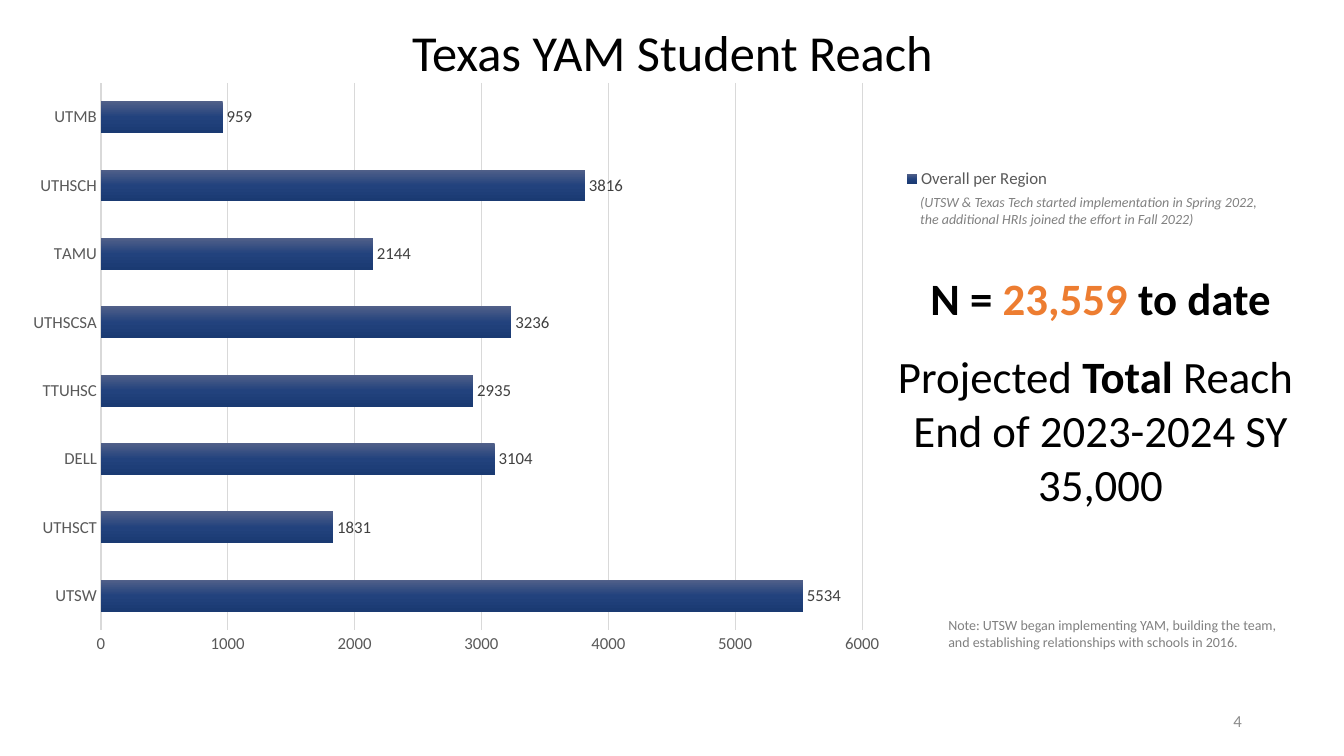
"""Build the Texas YAM student reach slide."""
import pptx
import pptx.chart.data
import pptx.dml.color
import pptx.enum.chart
import pptx.enum.text
import pptx.oxml
import pptx.oxml.ns
import pptx.util

Pt = pptx.util.Pt
ALIGN = pptx.enum.text.PP_ALIGN
ANCHOR = pptx.enum.text.MSO_ANCHOR
CHART = pptx.enum.chart

THEME = {
    "font": "Calibri",
    "ink": "000000", "accent": "ED7D31", "muted": "808080", "number": "8C8C8C",
    "axis": "595959", "label": "404040", "grid": "D9D9D9",
    "bar": ((0, "516089"), (50, "22427D"), (100, "1A3A72")),
    "title": 36, "headline": 32, "chart": 12, "note": 10,
}

TITLE = "Texas YAM Student Reach"
SERIES = "Overall per Region"
REACH = {
    "UTSW": 5534, "UTHSCT": 1831, "DELL": 3104, "TTUHSC": 2935,
    "UTHSCSA": 3236, "TAMU": 2144, "UTHSCH": 3816, "UTMB": 959,
}
TOTALS = [
    [("N = ", "ink", True), ("23,559", "accent", True), (" to date", "ink", True)],
    [("Projected ", "ink", False), ("Total", "ink", True), (" Reach ", "ink", False)],
    [("End of 2023-2024 SY", "ink", False)],
    [("35,000", "ink", False)],
]
START_NOTE = ("(UTSW & Texas Tech started implementation in Spring 2022, "
              "the additional HRIs joined the effort in Fall 2022)")
HISTORY_NOTE = ("Note: UTSW began implementing YAM, building the team, "
                "and establishing relationships with schools in 2016.")
PAGE = "4"

TITLE_BOX = (45.4, 16.6, 869.8, 67.7)
CHART_BOX = (9.4, 50.4, 748, 424.8)
PLOT_BOX = (72.1, 59.3, 543.7, 390.7)
LEGEND_BOX = (644, 118, 108, 20)
TOTALS_BOX = (606.2, 190.1, 360, 179.3)
TOTALS_GAP = 17
NOTES = [
    (START_NOTE, (650.2, 134.6, 258.5, 31.7), "note", "muted", True, ALIGN.LEFT, ANCHOR.TOP),
    (HISTORY_NOTE, (670.3, 437, 254.9, 31.7), "note", "muted", False, ALIGN.LEFT, ANCHOR.TOP),
    (PAGE, (678.2, 500.4, 216, 28.8), "chart", "number", False, ALIGN.RIGHT, ANCHOR.MIDDLE),
]


def apply(target, values):
    for key, value in values.items():
        setattr(target, key, value)


def color(name):
    return pptx.dml.color.RGBColor.from_string(THEME[name])


def style(font, size, ink, **extra):
    apply(font, {"name": THEME["font"], "size": Pt(THEME[size]), **extra})
    font.color.rgb = color(ink)


def write(paragraph, words, size, ink, **extra):
    run = paragraph.add_run()
    run.text = words
    style(run.font, size, ink, **extra)


def add_frame(slide, box, anchor=ANCHOR.TOP):
    frame = slide.shapes.add_textbox(*map(Pt, box)).text_frame
    apply(frame, {"word_wrap": True, "vertical_anchor": anchor})
    return frame


def set_layout(element, box, inner=False):
    left, top, width, height = CHART_BOX
    shares = {"x": (box[0] - left) / width, "y": (box[1] - top) / height,
              "w": box[2] / width, "h": box[3] / height}
    target = '<c:layoutTarget val="inner"/>' if inner else ""
    modes = "".join(f'<c:{axis}Mode val="edge"/>' for axis in "xy")
    sizes = "".join(f'<c:{key} val="{share:.4f}"/>' for key, share in shares.items())
    layout = pptx.oxml.parse_xml(
        f'<c:layout {pptx.oxml.ns.nsdecls("c")}><c:manualLayout>'
        f'{target}{modes}{sizes}</c:manualLayout></c:layout>')
    for old in element.findall(pptx.oxml.ns.qn("c:layout")):
        element.remove(old)
    element.insert(0 if inner else 1, layout)


def add_title(slide):
    title = slide.shapes.title
    apply(title, dict(zip(("left", "top", "width", "height"), map(Pt, TITLE_BOX))))
    title.text_frame.vertical_anchor = ANCHOR.TOP
    paragraph = title.text_frame.paragraphs[0]
    apply(paragraph, {"alignment": ALIGN.CENTER, "line_spacing": 0.9})
    write(paragraph, TITLE, "title", "ink")


def add_reach_chart(slide):
    data = pptx.chart.data.CategoryChartData()
    data.categories = list(REACH)
    data.add_series(SERIES, list(REACH.values()))
    chart = slide.shapes.add_chart(
        CHART.XL_CHART_TYPE.BAR_CLUSTERED, *map(Pt, CHART_BOX), data).chart
    style(chart.font, "note", "ink")
    apply(chart, {"has_title": False, "has_legend": True})
    apply(chart.legend, {"position": CHART.XL_LEGEND_POSITION.RIGHT,
                         "include_in_layout": False})
    style(chart.legend.font, "chart", "axis")

    plot = chart.plots[0]
    apply(plot, {"gap_width": 115, "overlap": -20,
                 "vary_by_categories": False, "has_data_labels": True})
    apply(plot.data_labels, {"show_value": True,
                             "position": CHART.XL_LABEL_POSITION.OUTSIDE_END})
    style(plot.data_labels.font, "chart", "label")
    stops = "".join(f'<a:gs pos="{share * 1000}"><a:srgbClr val="{shade}"/></a:gs>'
                    for share, shade in THEME["bar"])
    gradient = pptx.oxml.parse_xml(
        f'<a:gradFill {pptx.oxml.ns.nsdecls("a")} rotWithShape="1"><a:gsLst>{stops}'
        '</a:gsLst><a:lin ang="5400000" scaled="0"/></a:gradFill>')
    bars = plot.series[0]
    bars.format.line.fill.background()
    bars.format.line._ln.addprevious(gradient)

    regions, students = chart.category_axis, chart.value_axis
    for axis in (regions, students):
        apply(axis, {"major_tick_mark": CHART.XL_TICK_MARK.NONE,
                     "minor_tick_mark": CHART.XL_TICK_MARK.NONE})
        style(axis.tick_labels.font, "chart", "axis")
    apply(students, {"minimum_scale": 0, "maximum_scale": 6000,
                     "major_unit": 1000, "has_major_gridlines": True})
    students.format.line.fill.background()
    for line, width in ((regions.format.line, 1),
                        (students.major_gridlines.format.line, 0.75)):
        line.color.rgb = color("grid")
        line.width = Pt(width)
    set_layout(chart._chartSpace.chart.plotArea, PLOT_BOX, inner=True)
    set_layout(chart.legend._element, LEGEND_BOX)


def add_totals(slide):
    frame = add_frame(slide, TOTALS_BOX)
    for index, pieces in enumerate(TOTALS):
        paragraph = frame.add_paragraph() if index else frame.paragraphs[0]
        paragraph.alignment = ALIGN.CENTER
        if index == 1:
            paragraph.space_before = Pt(TOTALS_GAP)
        for words, ink, bold in pieces:
            write(paragraph, words, "headline", ink, bold=bold)


def main():
    deck = pptx.Presentation()
    apply(deck, {"slide_width": Pt(960), "slide_height": Pt(540)})
    slide = deck.slides.add_slide(deck.slide_layouts[5])
    add_title(slide)
    add_reach_chart(slide)
    add_totals(slide)
    for words, box, size, ink, italic, alignment, anchor in NOTES:
        paragraph = add_frame(slide, box, anchor).paragraphs[0]
        paragraph.alignment = alignment
        write(paragraph, words, size, ink, italic=italic)
    deck.save("out.pptx")


if __name__ == "__main__":
    main()
